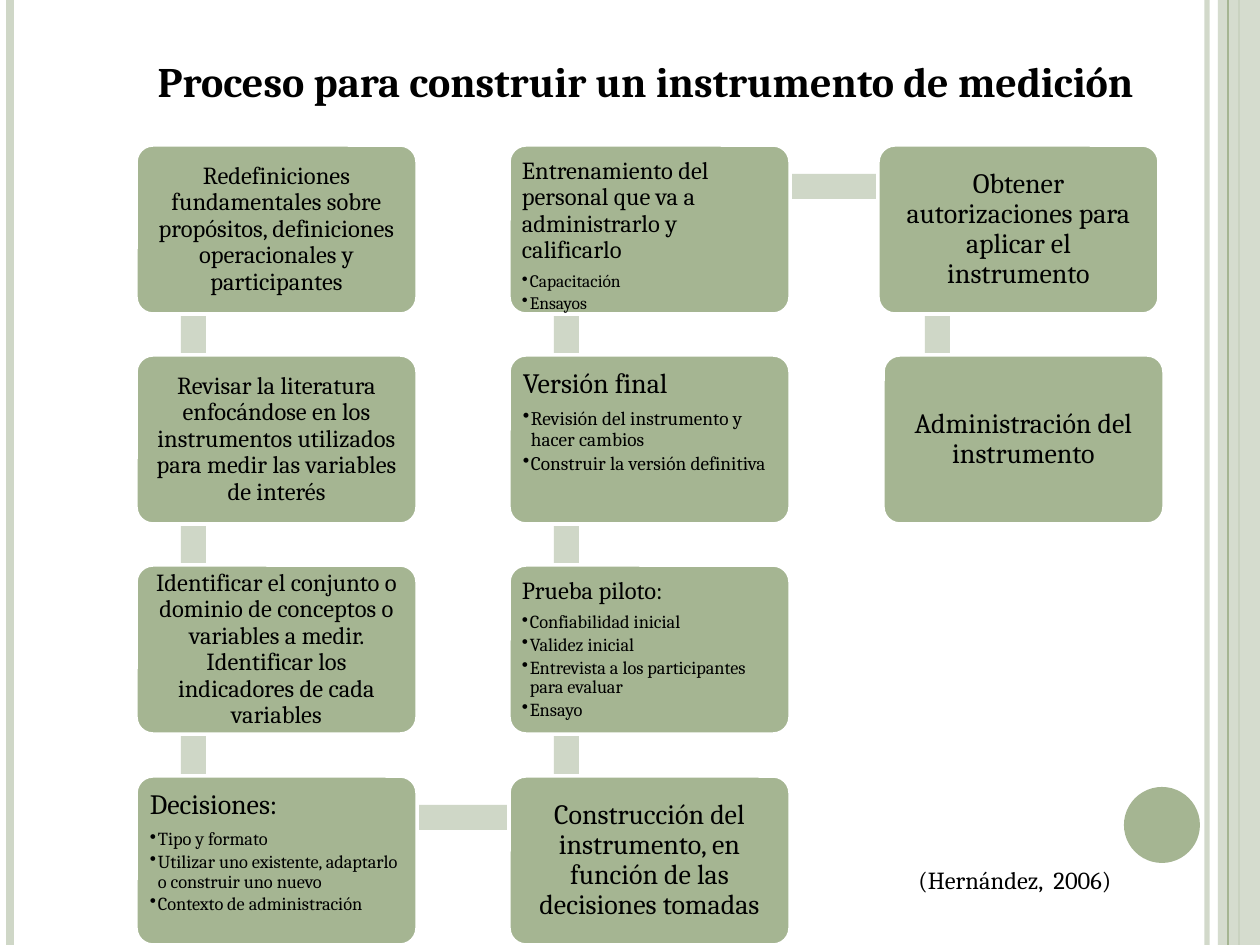
from dataclasses import dataclass
from itertools import pairwise

from lxml import etree
from pptx import Presentation
from pptx import util as u
from pptx.dml.color import RGBColor
from pptx.enum import shapes, text
from pptx.oxml.ns import qn

SCALE = 914400 / 126  # EMU in one px
LEFTS = (136, 509, 878)
TOP, LAST = 145, 776
ROWS = 4
WIDE, HIGH = 281, 169
BAR = 25
HUB = (57, 41)  # where the bars meet, from a card's corner


@dataclass(frozen=True)
class Theme:
    font: str = "Cambria"
    ink: str = "000000"
    green: str = "A5B592"
    pale: str = "CFD7C7"
    white: str = "FFFFFF"
    title: int = 24
    large: int = 16
    small: int = 14


@dataclass(frozen=True)
class Card:
    col: int
    row: int
    head: str
    size: int
    points: tuple[str, ...] = ()
    sub: float = 10.5
    shift: int = 0

    @property
    def left(self) -> int:
        return LEFTS[self.col] + self.shift

    @property
    def top(self) -> int:
        return TOP + (LAST - TOP) * self.row // (ROWS - 1)


@dataclass(frozen=True)
class Rule:
    x: int
    color: str
    width: float
    alpha: int = 100


T = Theme()

RULES = (
    Rule(1207, T.pale, 3, 93),
    Rule(10, T.pale, 4.5),
    Rule(1239, T.green, 1.5),
    Rule(1228, T.green, 0.75),
)

# In reading order: each card is tied to the next one.
CARDS = (
    Card(0, 0, "Redefiniciones fundamentales sobre propósitos, definiciones "
         "operacionales y participantes", T.small),
    Card(0, 1, "Revisar la literatura enfocándose en los instrumentos utilizados "
         "para medir las variables de interés", T.small),
    Card(0, 2, "Identificar el conjunto o dominio de conceptos o variables a medir. "
         "Identificar los indicadores de cada variables", T.small),
    Card(0, 3, "Decisiones:", T.large,
         ("Tipo y formato",
          "Utilizar uno existente, adaptarlo o construir uno nuevo",
          "Contexto de administración")),
    Card(1, 3, "Construcción del instrumento, en función de las decisiones tomadas",
         T.large),
    Card(1, 2, "Prueba piloto:", T.small,
         ("Confiabilidad inicial", "Validez inicial",
          "Entrevista a los participantes para evaluar", "Ensayo")),
    Card(1, 1, "Versión final", T.large,
         ("Revisión del instrumento y hacer cambios",
          "Construir la versión definitiva"), 11),
    Card(1, 0, "Entrenamiento del personal que va a administrarlo y calificarlo",
         T.small, ("Capacitación", "Ensayos"), 10),
    Card(2, 0, "Obtener autorizaciones para aplicar el instrumento", T.large),
    Card(2, 1, "Administración del instrumento", T.large, shift=5),
)


def px(n: float) -> u.Emu:
    return u.Emu(round(n * SCALE))


def rgb(code: str) -> RGBColor:
    return RGBColor.from_string(code)


def assign(obj, vals: dict) -> None:
    for key, val in vals.items():
        setattr(obj, key, val)


def fade(part, alpha: int) -> None:
    """Set the opacity, in percent, of the first colour in part."""
    color = next(part.iter(qn("a:srgbClr")))
    etree.SubElement(color, qn("a:alpha"), val=str(alpha * 1000))


def block(slide, kind, box: tuple[int, int, int, int], fill: str):
    shape = slide.shapes.add_shape(kind, *map(px, box))
    shape.shadow.inherit = False
    shape.fill.solid()
    shape.fill.fore_color.rgb = rgb(fill)
    shape.line.fill.background()
    return shape


def write(par, words: str, size: float, bold: bool = False) -> None:
    run = par.add_run()
    run.text = words
    assign(run.font, {"name": T.font, "size": u.Pt(size), "bold": bold})
    run.font.color.rgb = rgb(T.ink)


def bullet(par) -> None:
    par.level = 1
    props = par._p.get_or_add_pPr()
    props.set("marL", str(px(8)))
    props.set("indent", str(px(-8)))
    etree.SubElement(props, qn("a:buChar"), char="•")


def draw_rule(slide, rule: Rule) -> None:
    line = slide.shapes.add_connector(
        shapes.MSO_CONNECTOR.STRAIGHT, px(rule.x), 0, px(rule.x), px(945))
    line.line.width = u.Pt(rule.width)
    line.line.color.rgb = rgb(rule.color)
    etree.SubElement(line._element.spPr, qn("a:effectLst"))
    if rule.alpha < 100:
        fade(line._element.spPr, rule.alpha)


def draw_bar(slide, a: Card, b: Card) -> None:
    """Tie two cards that share a row or a column."""
    if a.row == b.row:
        box = (min(a.left, b.left) + HUB[0], a.top + HUB[1] - BAR // 2,
               abs(a.left - b.left), BAR)
    else:
        box = ((a.left + b.left) // 2 + HUB[0] - BAR // 2,
               min(a.top, b.top) + HUB[1], BAR, abs(a.top - b.top))
    block(slide, shapes.MSO_SHAPE.RECTANGLE, box, T.pale)


def draw_card(slide, card: Card) -> None:
    shape = block(slide, shapes.MSO_SHAPE.ROUNDED_RECTANGLE,
                  (card.left, card.top, WIDE, HIGH), T.green)
    shape.adjustments[0] = 0.1
    shape.line.color.rgb = rgb(T.white)
    shape.line.width = u.Pt(2)
    frame = shape.text_frame
    pad = px(9 if card.size == T.large else 8)
    anchor = text.MSO_ANCHOR.TOP if card.points else text.MSO_ANCHOR.MIDDLE
    align = text.PP_ALIGN.LEFT if card.points else text.PP_ALIGN.CENTER
    assign(frame, {"word_wrap": True, "vertical_anchor": anchor,
                   "margin_left": pad, "margin_right": pad,
                   "margin_top": pad, "margin_bottom": pad})
    for i, words in enumerate((card.head, *card.points)):
        par = frame.add_paragraph() if i else frame.paragraphs[0]
        size, gap = (card.sub, 0.15) if i else (card.size, 0.35)
        assign(par, {"alignment": align, "line_spacing": 0.9,
                     "space_before": u.Pt(0), "space_after": u.Pt(size * gap)})
        if i:
            bullet(par)
        write(par, words, size)


def draw_title(slide) -> None:
    title = slide.shapes.title
    assign(title, {"left": px(105), "top": px(45),
                   "width": px(1081), "height": px(71)})
    assign(title.text_frame, {"vertical_anchor": text.MSO_ANCHOR.MIDDLE,
                              "word_wrap": True,
                              "auto_size": text.MSO_AUTO_SIZE.NONE})
    par = title.text_frame.paragraphs[0]
    par.alignment = text.PP_ALIGN.CENTER
    write(par, "Proceso para construir un instrumento de medición", T.title, True)


def main() -> None:
    deck = Presentation()
    assign(deck, {"slide_width": px(1260), "slide_height": px(945)})
    slide = deck.slides.add_slide(deck.slide_layouts[5])
    for rule in RULES[:3]:
        draw_rule(slide, rule)
    band = block(slide, shapes.MSO_SHAPE.RECTANGLE, (1218, 0, 42, 945), T.pale)
    fade(band._element.spPr, 87)
    draw_rule(slide, RULES[3])
    block(slide, shapes.MSO_SHAPE.OVAL, (1124, 787, 76, 76), T.green)
    draw_title(slide)
    for a, b in pairwise(CARDS):
        draw_bar(slide, a, b)
    for card in CARDS:
        draw_card(slide, card)
    cite = slide.shapes.add_textbox(*map(px, (906, 859, 223, 43)))
    cite.text_frame.word_wrap = False
    write(cite.text_frame.paragraphs[0], "(Hernández,  2006)", T.small)
    deck.save("out.pptx")


if __name__ == "__main__":
    main()
